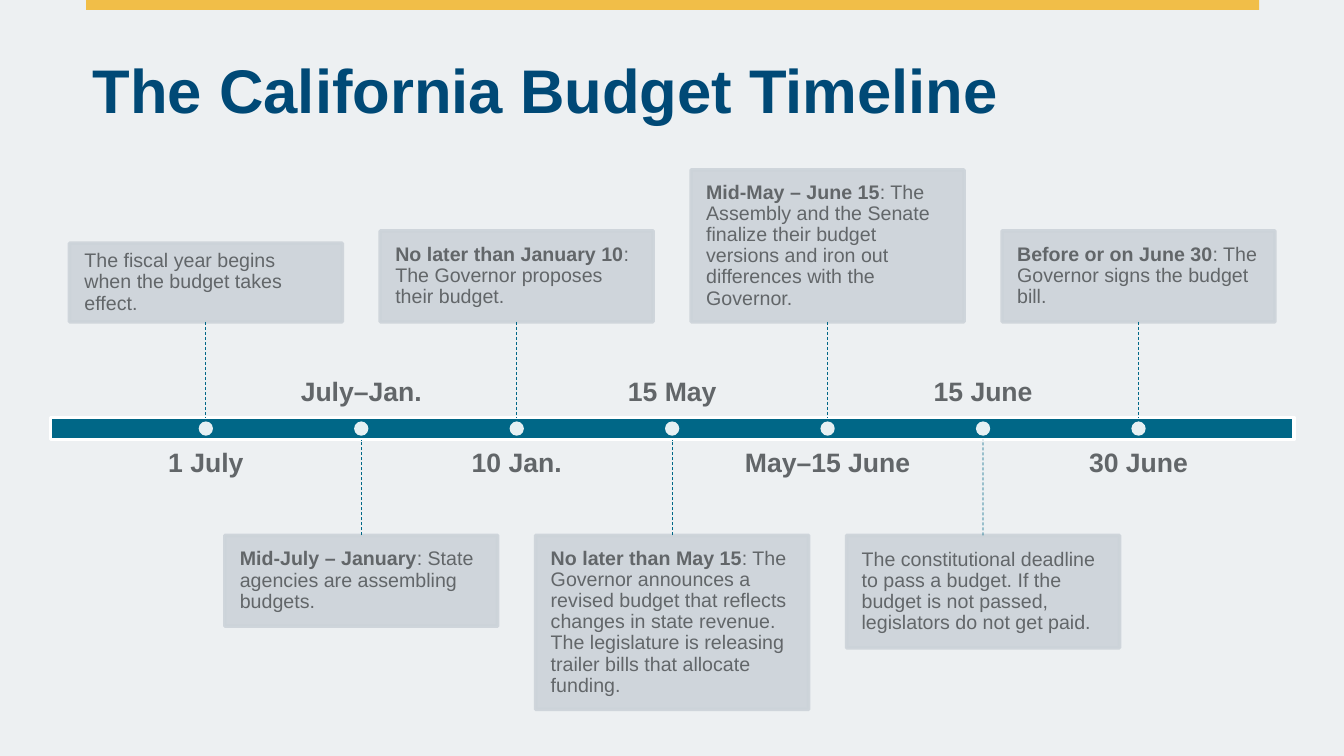
from lxml import etree
from pptx import Presentation
from pptx.dml.color import RGBColor
from pptx.enum import dml, shapes, text
from pptx.oxml import ns
from pptx.util import Cm, Pt

COLORS = {
    "background": "EDF0F2",
    "gold": "F1BE48",
    "navy": "004976",
    "teal": "006787",
    "gray": "626669",
    "card": "CCD3D9",
    "white": "FFFFFF",
}
FONT = "Arial"
EVENTS = [
    ("1 July", 1.98, "", "The fiscal year begins when the budget takes effect."),
    ("July–Jan.", 2.29, "Mid-July – January", ": State agencies are assembling budgets."),
    ("10 Jan.", 2.29, "No later than January 10", ": The Governor proposes their budget."),
    ("15 May", 4.39, "No later than May 15",
     ": The Governor announces a revised budget that reflects changes in state revenue. "
     "The legislature is releasing trailer bills that allocate funding."),
    ("May–15 June", 3.83, "Mid-May – June 15",
     ": The Assembly and the Senate finalize their budget versions "
     "and iron out differences with the Governor."),
    ("15 June", 2.84, "",
     "The constitutional deadline to pass a budget. If the budget is not passed, "
     "legislators do not get paid."),
    ("30 June", 2.29, "Before or on June 30", ": The Governor signs the budget bill."),
]
CARD_WIDTH = 6.88
LABEL_WIDTH, LABEL_HEIGHT = 6.27, 1.6
LABEL_GAP = 0.25
STEM = 2.41
DOT = 0.36


def color(name):
    return RGBColor.from_string(COLORS[name])


def set_alpha(fill, percent):
    for element in fill.iter(ns.qn("a:srgbClr")):
        etree.SubElement(element, ns.qn("a:alpha")).set("val", str(percent * 1000))


def add_box(slide, kind, box, fill, line=None):
    shape = slide.shapes.add_shape(kind, *[Cm(length) for length in box])
    shape.shadow.inherit = False
    shape.fill.solid()
    shape.fill.fore_color.rgb = color(fill)
    if line:
        shape.line.color.rgb = color(line)
        shape.line.width = Pt(2.5)
    else:
        shape.line.fill.background()
    return shape


def write(frame, runs, size, tint, align, anchor, insets, spacing):
    frame.word_wrap = True
    frame.auto_size = text.MSO_AUTO_SIZE.NONE
    frame.vertical_anchor = anchor
    (frame.margin_left, frame.margin_top,
     frame.margin_right, frame.margin_bottom) = [Cm(inset) for inset in insets]
    paragraph = frame.paragraphs[0]
    paragraph.alignment = align
    paragraph.line_spacing = spacing
    paragraph.space_before = Pt(0)
    for words, bold in runs:
        run = paragraph.add_run()
        run.text = words
        run.font.name = FONT
        run.font.size = Pt(size)
        run.font.bold = bold
        run.font.color.rgb = color(tint)


def add_header(slide, left, top, width, height):
    add_box(slide, shapes.MSO_SHAPE.RECTANGLE, (left - 0.17, 0, width + 0.35, 0.25), "gold")
    title = slide.shapes.title
    title.left, title.top, title.width, title.height = Cm(left), Cm(top), Cm(width), Cm(height)
    write(title.text_frame, [("The California Budget Timeline", True)], 44, "navy",
          text.PP_ALIGN.LEFT, text.MSO_ANCHOR.BOTTOM, (0, 0, 0.25, 0.25), 0.8)


def add_label(slide, label, center, edge, above):
    top = edge - LABEL_GAP - LABEL_HEIGHT if above else edge + LABEL_GAP
    box = slide.shapes.add_textbox(Cm(center - LABEL_WIDTH / 2), Cm(top),
                                   Cm(LABEL_WIDTH), Cm(LABEL_HEIGHT))
    anchor = text.MSO_ANCHOR.BOTTOM if above else text.MSO_ANCHOR.TOP
    write(box.text_frame, [(label, True)], 19, "gray",
          text.PP_ALIGN.CENTER, anchor, (0, 0, 0, 0), 0.9)


def add_card(slide, lead, body, center, edge, height, above):
    top = edge - STEM - height if above else edge + STEM
    card = add_box(slide, shapes.MSO_SHAPE.RECTANGLE,
                   (center - CARD_WIDTH / 2, top, CARD_WIDTH, height), "card", "card")
    set_alpha(card._element.spPr, 90)
    runs = [(words, bold) for words, bold in ((lead, True), (body, False)) if words]
    write(card.text_frame, runs, 14, "gray", text.PP_ALIGN.LEFT,
          text.MSO_ANCHOR.MIDDLE, (0.38,) * 4, 0.9)
    return card


def add_stem(slide, card, center, edge, above):
    start = edge - STEM if above else edge + STEM
    stem = slide.shapes.add_connector(shapes.MSO_CONNECTOR.STRAIGHT,
                                      Cm(center), Cm(start), Cm(center), Cm(edge))
    stem.begin_connect(card, 2 if above else 0)
    stem.line.color.rgb = color("teal")
    stem.line.width = Pt(0.5)
    stem.line.dash_style = dml.MSO_LINE.DASH
    etree.SubElement(stem._element.spPr, ns.qn("a:effectLst"))
    return stem


def add_timeline(slide, left, top, width, height):
    bar = add_box(slide, shapes.MSO_SHAPE.RECTANGLE,
                  (left, top, width, height), "teal", "white")
    step = width / (len(EVENTS) + 1)
    for index, (label, card_height, lead, body) in enumerate(EVENTS):
        center = left + step * (index + 1)
        above = index % 2 == 0
        near, far = (top, top + height) if above else (top + height, top)
        add_label(slide, label, center, far, not above)
        card = add_card(slide, lead, body, center, near, card_height, above)
        stem = add_stem(slide, card, center, near, above)
        if index == len(EVENTS) // 2:
            stem.end_connect(bar, 0 if above else 2)
        dot = add_box(slide, shapes.MSO_SHAPE.OVAL,
                      (center - DOT / 2, top + (height - DOT) / 2, DOT, DOT), "white")
        set_alpha(dot._element.spPr, 90)


def main():
    presentation = Presentation()
    presentation.slide_width, presentation.slide_height = Cm(33.87), Cm(19.05)
    slide = presentation.slides.add_slide(presentation.slide_layouts[5])
    slide.background.fill.solid()
    slide.background.fill.fore_color.rgb = color("background")
    add_header(slide, 2.34, -0.66, 29.21, 4.06)
    add_timeline(slide, 1.27, 10.52, 31.34, 0.56)
    presentation.save("out.pptx")


if __name__ == "__main__":
    main()
